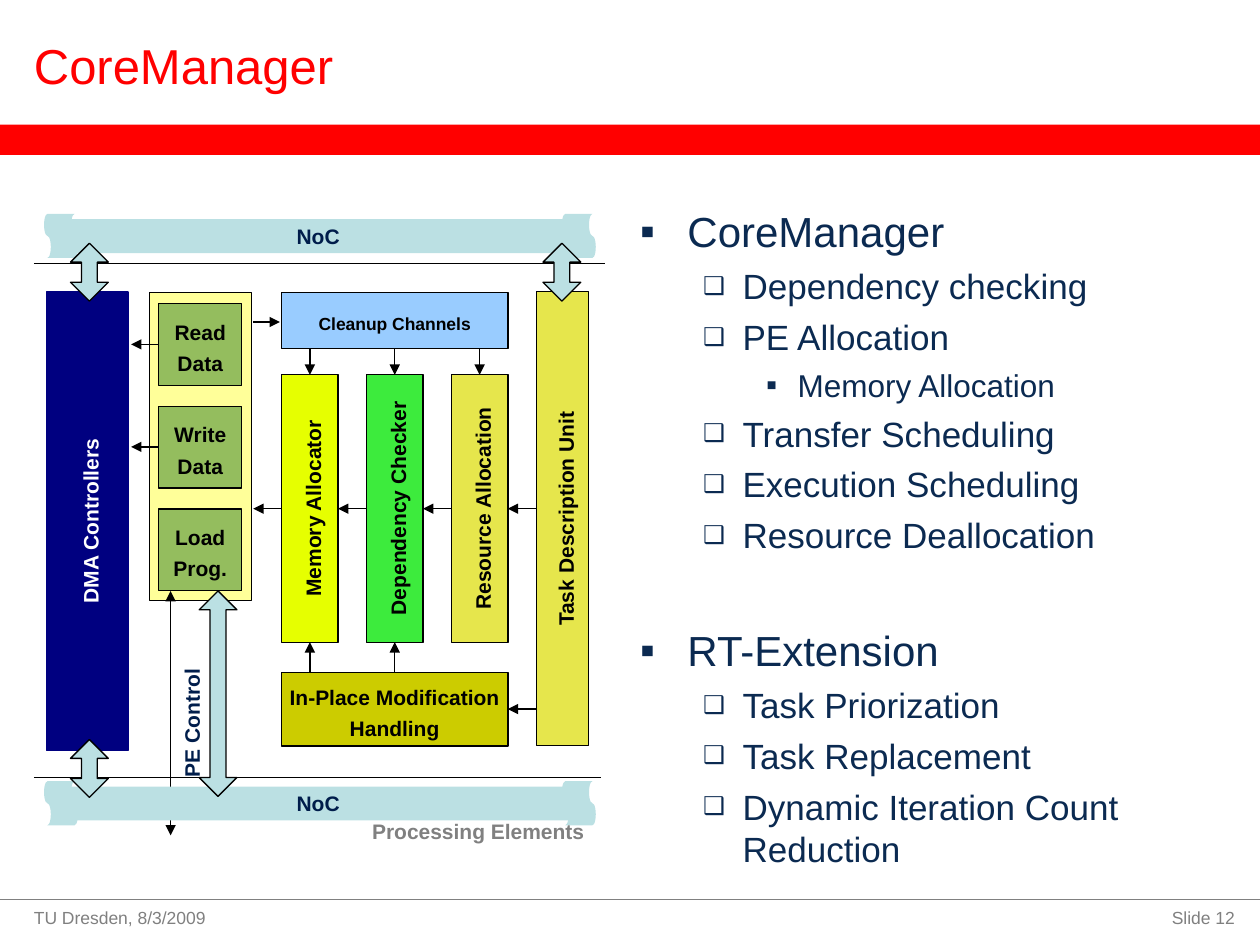
from dataclasses import dataclass
from typing import Any

from lxml import etree
from pptx import Presentation
from pptx.dml.color import RGBColor
from pptx.enum.shapes import MSO_CONNECTOR, MSO_SHAPE
from pptx.enum.text import MSO_ANCHOR, MSO_AUTO_SIZE, PP_ALIGN
from pptx.oxml.ns import qn
from pptx.util import Pt

RECT = MSO_SHAPE.RECTANGLE
ROUND = MSO_SHAPE.ROUNDED_RECTANGLE
TAPE = MSO_SHAPE.FLOWCHART_PUNCHED_TAPE
ARROW = MSO_SHAPE.UP_DOWN_ARROW
STRAIGHT = MSO_CONNECTOR.STRAIGHT
TOP, MIDDLE = MSO_ANCHOR.TOP, MSO_ANCHOR.MIDDLE
LEFT, CENTER, RIGHT = PP_ALIGN.LEFT, PP_ALIGN.CENTER, PP_ALIGN.RIGHT
FIXED = MSO_AUTO_SIZE.NONE

BLACK, WHITE, RED, GRAY = "000000", "FFFFFF", "FF0000", "808080"
NAVY, INK, DEEP = "000080", "0B2A51", "001D4B"
ICE, GREEN, SAND = "BBE0E3", "94BD5E", "E6E64C"


def color(value):
    return RGBColor.from_string(value)


@dataclass
class Deck:
    slide: Any
    font: str = "Arial"
    weight: float = 0.75

    def place(self, shape, x, y, w, h):
        shape.left, shape.top, shape.width, shape.height = Pt(x), Pt(y), Pt(w), Pt(h)

    def frame(self, shape, pad, anchor, wrap=True):
        frame = shape.text_frame
        frame.word_wrap = wrap
        frame.auto_size = FIXED
        frame.vertical_anchor = anchor
        frame.margin_left, frame.margin_top, frame.margin_right, frame.margin_bottom = map(Pt, pad)
        return frame

    def add_text(self, part, text, size, ink, bold=False, align=LEFT, lead=1.0):
        part.alignment = align
        part.line_spacing = lead
        run = part.add_run()
        run.text = text
        run.font.name = self.font
        run.font.size = Pt(size)
        run.font.bold = bold
        run.font.color.rgb = color(ink)

    def fill(self, shape, lines, size, ink, bold=True, align=CENTER, lead=1.0,
             pad=(7.2, 3.6, 7.2, 3.6), anchor=MIDDLE, wrap=True):
        frame = self.frame(shape, pad, anchor, wrap)
        for i, text in enumerate(lines):
            part = frame.add_paragraph() if i else frame.paragraphs[0]
            self.add_text(part, text, size, ink, bold, align, lead)

    def turn(self, shape, x, y, w, h):
        self.place(shape, x + (w - h) / 2, y + (h - w) / 2, h, w)
        shape.rotation = 270

    def shape(self, kind, x, y, w, h, fill, edge=None, turned=False):
        shape = self.slide.shapes.add_shape(kind, Pt(x), Pt(y), Pt(w), Pt(h))
        shape.shadow.inherit = False
        shape.fill.solid()
        shape.fill.fore_color.rgb = color(fill)
        if edge:
            shape.line.color.rgb = color(edge)
            shape.line.width = Pt(self.weight)
        else:
            shape.line.fill.background()
        if turned:
            self.turn(shape, x, y, w, h)
        return shape

    def block(self, x, y, w, h, fill, lines=(), size=12, ink=BLACK, edge=BLACK,
              turned=False, side=7.2):
        shape = self.shape(ROUND, x, y, w, h, fill, edge, turned)
        shape.adjustments[0] = 0
        self.fill(shape, lines, size, ink, lead=1.24, pad=(side, 3.6, side, 3.6))

    def label(self, x, y, w, h, text, size, ink, turned=False, **style):
        box = self.slide.shapes.add_textbox(Pt(x), Pt(y), Pt(w), Pt(h))
        if turned:
            self.turn(box, x, y, w, h)
        self.fill(box, [text], size, ink, **style)

    def line(self, x1, y1, x2, y2, ink=BLACK, heads=()):
        line = self.slide.shapes.add_connector(STRAIGHT, Pt(x1), Pt(y1), Pt(x2), Pt(y2))
        line.line.color.rgb = color(ink)
        line.line.width = Pt(self.weight)
        props = line._element.spPr
        for head in heads:
            etree.SubElement(props.find(qn("a:ln")), qn("a:" + head), type="triangle")
        etree.SubElement(props, qn("a:effectLst"))

    def point(self, x1, y1, x2, y2):
        self.line(x1, y1, x2, y2, heads=["tailEnd"])

    def arrow(self, x, y, h):
        shape = self.shape(ARROW, x, y, 21.6, h, ICE, BLACK)
        shape.adjustments[0] = 0.44
        shape.adjustments[1] = 0.42

    def noc(self, y):
        for x in (25.2, 321.1):
            self.shape(TAPE, x, y, 19.4, 25.2, ICE, turned=True)
        bar = self.shape(RECT, 35.3, y + 3.1, 300.2, 19.4, ICE)
        self.fill(bar, ["NoC"], 12, DEEP, pad=(0, 3.6, 7.2, 3.6), wrap=False)

    def title(self, text):
        title = self.slide.shapes.title
        self.place(title, 19.4, 11.5, 532.8, 51.1)
        self.fill(title, [text], 28, RED, bold=False, align=LEFT, pad=(0, 3.6, 7.2, 3.6))

    def list(self, items):
        body = self.slide.placeholders[1]
        self.place(body, 365.8, 111.6, 354.2, 399.6)
        frame = self.frame(body, (0, 6, 7.2, 3.6), TOP)
        looks = [(24, 27, 27, "▪", 100), (20, 58.5, 22.5, "❑", 70), (18, 90, 18, "▪", 100)]
        for i, (level, text, space) in enumerate(items):
            size, left, hang, mark, scale = looks[level]
            part = frame.add_paragraph() if i else frame.paragraphs[0]
            part.level = level
            props = part._p.get_or_add_pPr()
            props.set("marL", str(Pt(left)))
            props.set("indent", str(-Pt(hang)))
            etree.SubElement(props, qn("a:buSzPct"), val=str(scale * 1000))
            etree.SubElement(props, qn("a:buFont"), typeface=self.font)
            etree.SubElement(props, qn("a:buChar"), char=mark)
            part.space_before = Pt(space)
            self.add_text(part, text, size, INK)


def draw(deck):
    deck.shape(RECT, 0, 71.3, 720, 17.3, RED)
    deck.line(0, 514, 720, 514, GRAY)
    foot = dict(bold=False, pad=(0, 0, 0, 0), anchor=TOP)
    deck.label(19.4, 518.4, 162, 20.9, "TU Dresden, 8/3/2009", 10, GRAY, align=LEFT, **foot)
    deck.label(555.8, 518.4, 149.8, 18, "Slide 12", 10, GRAY, align=RIGHT, **foot)
    deck.title("CoreManager")

    deck.block(85.5, 167.3, 58.2, 175.8, "FFFF99")
    deck.block(26.5, 166.8, 46.6, 262, NAVY, ["DMA Controllers"], ink=WHITE,
               edge=NAVY, turned=True)
    for i, lines in enumerate([("Read", "Data"), ("Write", "Data"), ("Load", "Prog.")]):
        deck.block(90.7, 173.4 + 58.7 * i, 47.5, 46.8, GREEN, lines)

    step, mid = 48.5, 177.1
    units = [("Memory Allocator", "E6FF00"), ("Dependency Checker", "3DEB3D"),
             ("Resource Allocation", SAND)]
    for i, (text, fill) in enumerate(units):
        deck.block(160.8 + step * i, 214, 32.4, 153, fill, [text], turned=True)
        deck.point(mid + step * i, 199.4, mid + step * i, 214.2)
    for i in range(2):
        deck.point(mid + step * i, 384.5, mid + step * i, 367)
    for i in range(4):
        deck.point(160.8 + step * i, 290.7, 144.7 + step * i, 290.7)
    deck.block(160.8, 384.4, 129.4, 41.8, "CCCC00", ["In-Place Modification Handling"], side=0)
    deck.block(306.4, 166.7, 30, 259.5, SAND, ["Task Description Unit"], turned=True)
    deck.block(160.8, 167.3, 129.4, 31.9, "99CCFF", ["Cleanup Channels"], size=10)

    deck.point(306.4, 405.2, 290.2, 405.2)
    deck.point(144.7, 184, 160, 184)
    for y in (196.8, 255.4):
        deck.point(90.7, y, 74.9, y)
    deck.line(19.4, 150.5, 345.6, 150.5)
    deck.line(19.4, 444.2, 343.4, 444.2)
    deck.line(97.5, 337.7, 97.5, 477.4, heads=["headEnd", "tailEnd"])
    for y in (446.4, 122.2):
        deck.noc(y)
    deck.arrow(113.8, 337.7, 117.4)
    for x, y in [(40.3, 422.6), (40.3, 139), (310.3, 139)]:
        deck.arrow(x, y, 33.1)
    deck.label(100.5, 377, 18, 72, "PE Control", 12, DEEP, turned=True,
               pad=(0, 0, 0, 0), wrap=False)
    deck.label(212.4, 464.4, 128.9, 21.6, "Processing Elements", 12, GRAY,
               pad=(0, 3.6, 7.2, 3.6), anchor=TOP, wrap=False)

    deck.list([
        (0, "CoreManager", 0),
        (1, "Dependency checking", 5),
        (1, "PE Allocation", 5),
        (2, "Memory Allocation", 4.5),
        (1, "Transfer Scheduling", 5),
        (1, "Execution Scheduling", 5),
        (1, "Resource Deallocation", 5),
        (0, "RT-Extension", 39.4),
        (1, "Task Priorization", 5),
        (1, "Task Replacement", 5),
        (1, "Dynamic Iteration Count Reduction", 5),
    ])


def main():
    show = Presentation()
    show.slide_width, show.slide_height = Pt(720), Pt(540)
    draw(Deck(show.slides.add_slide(show.slide_layouts[1])))
    show.save("out.pptx")


if __name__ == "__main__":
    main()
